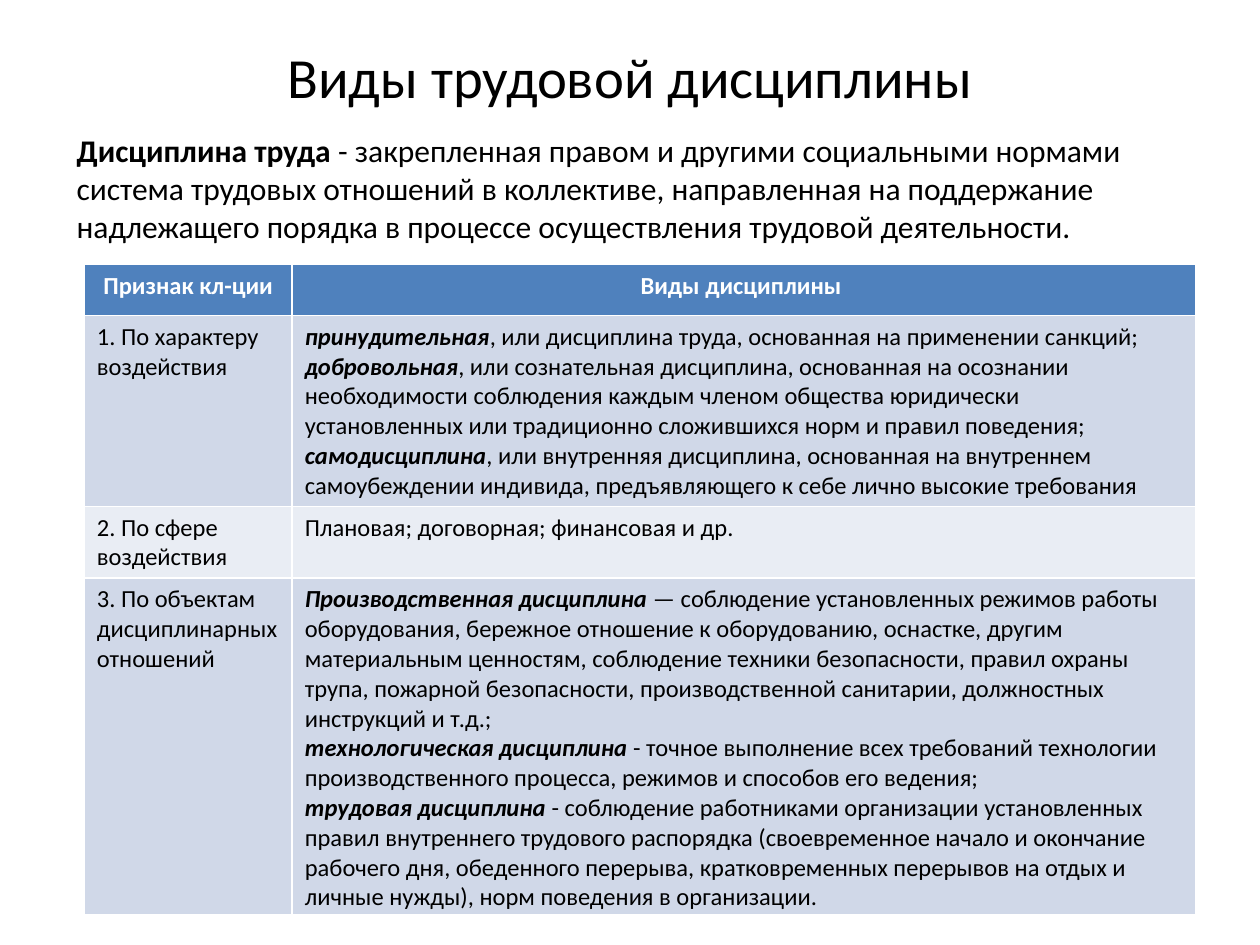
"""Build the slide on the kinds of labour discipline."""
from dataclasses import dataclass

from pptx import Presentation
from pptx import util as u
from pptx.dml.color import RGBColor
from pptx.enum import text

HUES = {"ink": "000000", "white": "FFFFFF", "head": "4F81BD",
        "dark": "D0D8E8", "light": "E9EDF4"}
FONT = "Calibri"


@dataclass
class Run:
    words: str
    bold: bool = False
    slant: bool = False


@dataclass
class Row:
    high: float
    fill: str
    cells: list[list[list[Run]]]


@dataclass
class Box:
    left: float
    top: float
    wide: float
    high: float
    size: float
    paras: list[list[Run]]
    align: int = text.PP_ALIGN.LEFT
    anchor: int = text.MSO_ANCHOR.TOP
    gap: float = 0


def term(name: str, rest: str) -> list[Run]:
    return [Run(name, True, True), Run(rest)]


def head(words: str) -> list[list[Run]]:
    return [[Run(words, True)]]


def plain(words: str) -> list[list[Run]]:
    return [[Run(words)]]


BOXES = [
    Box(36, 21.6, 648, 43.9, 32.4, plain("Виды трудовой дисциплины"),
        text.PP_ALIGN.CENTER, text.MSO_ANCHOR.MIDDLE),
    Box(36.7, 71.3, 648, 405.4, 18, [[
        Run("Дисциплина труда ", True),
        Run("- закрепленная правом и другими социальными нормами система "
            "трудовых отношений в коллективе, направленная на поддержание "
            "надлежащего порядка в процессе осуществления трудовой "
            "деятельности.")]], gap=3.6),
]

ROWS = [
    Row(29.2, "head", [head("Признак кл-ции"), head("Виды дисциплины ")]),
    Row(109, "dark", [plain("1. По характеру воздействия"), [
        term("принудительная",
             ", или дисциплина труда, основанная на применении санкций;"),
        term("добровольная",
             ", или сознательная дисциплина, основанная на осознании "
             "необходимости соблюдения каждым членом общества юридически "
             "установленных или традиционно сложившихся норм и правил "
             "поведения;"),
        term("самодисциплина",
             ", или внутренняя дисциплина, основанная на внутреннем "
             "самоубеждении индивида, предъявляющего к себе лично высокие "
             "требования")]]),
    Row(41, "light", [plain("2. По сфере воздействия"),
                      plain("Плановая; договорная; финансовая и др.")]),
    Row(191, "dark", [plain("3. По объектам дисциплинарных отношений"), [
        term("Производственная дисциплина ",
             "— соблюдение установленных режимов работы оборудования, "
             "бережное отношение к оборудованию, оснастке, другим "
             "материальным ценностям, соблюдение техники безопасности, "
             "правил охраны трупа, пожарной безопасности, производственной "
             "санитарии, должностных инструкций и т.д.;"),
        term("технологическая дисциплина ",
             "- точное выполнение всех требований технологии "
             "производственного процесса, режимов и способов его ведения;"),
        term("трудовая дисциплина ",
             "- соблюдение работниками организации установленных правил "
             "внутреннего трудового распорядка (своевременное начало и "
             "окончание рабочего дня, обеденного перерыва, кратковременных "
             "перерывов на отдых и личные нужды), норм поведения в "
             "организации.")]]),
]
COLS = [118.8, 516.2]


def write(frame, paras: list[list[Run]], size: float, hue: str,
          align: int, gap: float = 0) -> None:
    for i, runs in enumerate(paras):
        para = frame.add_paragraph() if i else frame.paragraphs[0]
        para.alignment = align
        para.space_before = u.Pt(gap)
        for item in runs:
            run = para.add_run()
            run.text = item.words
            font = run.font
            font.name, font.size = FONT, u.Pt(size)
            font.bold, font.italic = item.bold, item.slant
            font.color.rgb = RGBColor.from_string(HUES[hue])


def draw_box(slide, box: Box) -> None:
    shape = slide.shapes.add_textbox(
        *map(u.Pt, (box.left, box.top, box.wide, box.high)))
    frame = shape.text_frame
    frame.word_wrap = True
    frame.vertical_anchor = box.anchor
    write(frame, box.paras, box.size, "ink", box.align, box.gap)


def draw_table(slide, left: float, top: float, rows: list[Row]) -> None:
    high = sum(row.high for row in rows)
    table = slide.shapes.add_table(
        len(rows), len(COLS), *map(u.Pt, (left, top, sum(COLS), high))).table
    for col, wide in zip(table.columns, COLS):
        col.width = u.Pt(wide)
    for line, row in zip(table.rows, rows):
        line.height = u.Pt(row.high)
        top_row = row.fill == "head"
        hue = "white" if top_row else "ink"
        align = text.PP_ALIGN.CENTER if top_row else text.PP_ALIGN.LEFT
        for cell, paras in zip(line.cells, row.cells):
            cell.fill.solid()
            cell.fill.fore_color.rgb = RGBColor.from_string(HUES[row.fill])
            write(cell.text_frame, paras, 14, hue, align)


def main() -> None:
    deck = Presentation()
    deck.slide_width, deck.slide_height = u.Pt(720), u.Pt(540)
    slide = deck.slides.add_slide(deck.slide_layouts[6])
    for box in BOXES:
        draw_box(slide, box)
    draw_table(slide, 48.2, 151.2, ROWS)
    deck.save("out.pptx")


if __name__ == "__main__":
    main()
